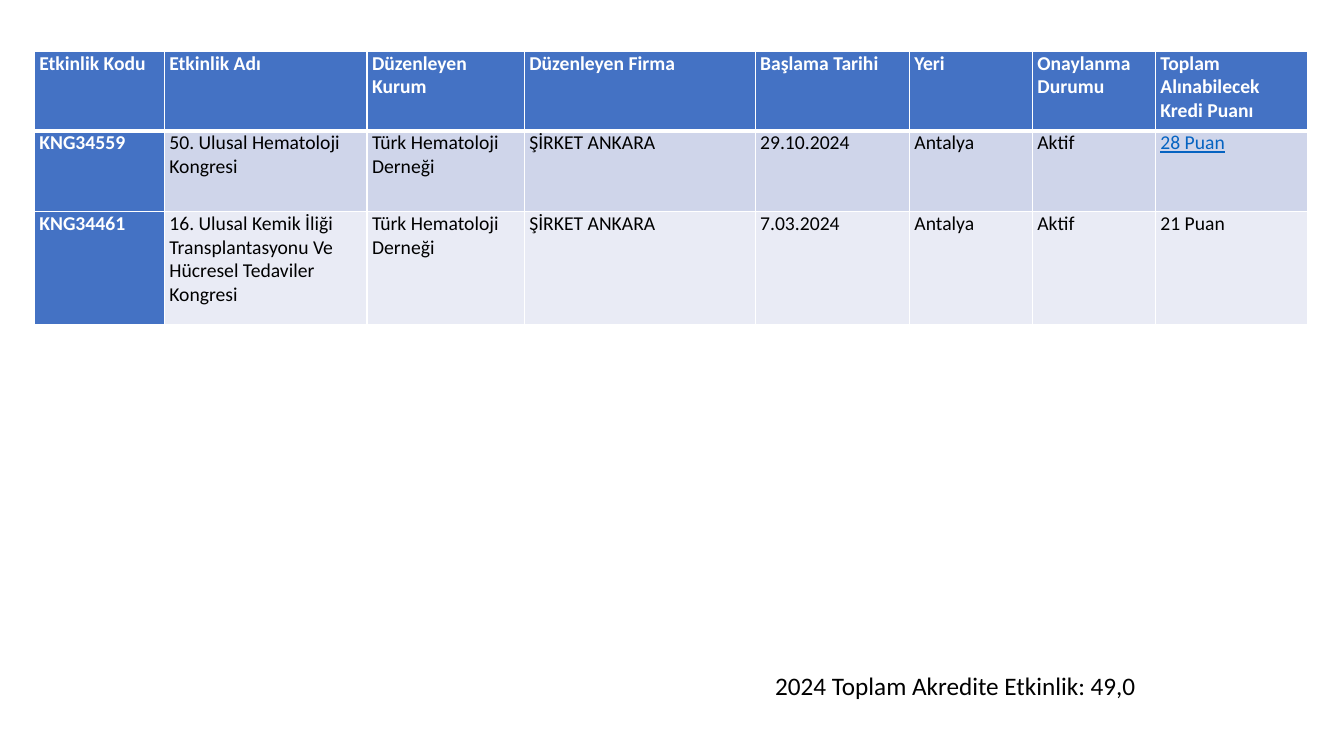
from lxml import etree
from pptx import Presentation
from pptx import util as u
from pptx.dml.color import RGBColor
from pptx.enum import text
from pptx.oxml import ns

PX = 9144  # 100 px to the inch
FONT = "Calibri"
WHITE, BLACK, BLUE, LINK = "FFFFFF", "000000", "4472C4", "0563C1"
BAND_FILLS = ["CFD5EA", "E9EBF5"]

COLUMN_WIDTHS = [129, 201, 156, 229, 153, 122, 122, 151]
ROW_HEIGHTS = [79, 80, 112]
EVENTS = [
    ["Etkinlik Kodu", "Etkinlik Adı", "Düzenleyen Kurum", "Düzenleyen Firma",
     "Başlama Tarihi", "Yeri", "Onaylanma Durumu", "Toplam Alınabilecek Kredi Puanı"],
    ["KNG34559", "50. Ulusal Hematoloji Kongresi", "Türk Hematoloji Derneği",
     "ŞİRKET ANKARA", "29.10.2024", "Antalya", "Aktif", "28 Puan"],
    ["KNG34461", "16. Ulusal Kemik İliği Transplantasyonu Ve Hücresel Tedaviler Kongresi",
     "Türk Hematoloji Derneği", "ŞİRKET ANKARA", "7.03.2024", "Antalya", "Aktif", "21 Puan"],
]
UNDERLINED_CELL = (1, 7)


def px(length):
    return u.Emu(length * PX)


def color(hex_string):
    return RGBColor.from_string(hex_string)


def style_font(paragraph, size, hex_string, bold=False):
    font = paragraph.font
    font.name, font.size, font.bold = FONT, u.Pt(size), bold
    font.color.rgb = color(hex_string)


def add_borders(cell, widths):
    """Draw white cell borders; widths maps L, R, T, B to points, in that order."""
    properties = cell._tc.get_or_add_tcPr()
    for side, width in widths.items():
        line = etree.SubElement(properties, ns.qn(f"a:ln{side}"), w=str(u.Pt(width)))
        fill = etree.SubElement(line, ns.qn("a:solidFill"))
        etree.SubElement(fill, ns.qn("a:srgbClr"), val=WHITE)


def fill_cell(cell, row, column, wording):
    is_heading = row == 0 or column == 0
    cell.margin_left = cell.margin_right = px(5)
    cell.margin_top = cell.margin_bottom = 0
    add_borders(cell, {"L": 1, "R": 1, "T": 3 if row == 1 else 1, "B": 3 if row == 0 else 1})
    cell.fill.solid()
    cell.fill.fore_color.rgb = color(BLUE if is_heading else BAND_FILLS[row - 1])
    cell.text = wording
    paragraph = cell.text_frame.paragraphs[0]
    underlined = (row, column) == UNDERLINED_CELL
    style_font(paragraph, 14, WHITE if is_heading else LINK if underlined else BLACK, is_heading)
    if underlined:
        paragraph.font.underline = True


def add_event_table(slide, left, top):
    table = slide.shapes.add_table(
        len(ROW_HEIGHTS), len(COLUMN_WIDTHS), px(left), px(top),
        px(sum(COLUMN_WIDTHS)), px(sum(ROW_HEIGHTS))).table
    table.first_col = True
    for column, width in zip(table.columns, COLUMN_WIDTHS):
        column.width = px(width)
    for row, height in zip(table.rows, ROW_HEIGHTS):
        row.height = px(height)
    for row, wordings in enumerate(EVENTS):
        for column, wording in enumerate(wordings):
            fill_cell(table.cell(row, column), row, column, wording)


def add_total(slide, left, top, width, height):
    frame = slide.shapes.add_textbox(px(left), px(top), px(width), px(height)).text_frame
    frame.word_wrap = True
    frame.auto_size = text.MSO_AUTO_SIZE.SHAPE_TO_FIT_TEXT
    frame.text = "2024 Toplam Akredite Etkinlik: 49,0"
    style_font(frame.paragraphs[0], 18, BLACK)


def main():
    presentation = Presentation()
    presentation.slide_width, presentation.slide_height = px(1333), px(750)
    slide = presentation.slides.add_slide(presentation.slide_layouts[6])
    add_event_table(slide, 34, 51)
    add_total(slide, 759, 660, 382, 40)
    presentation.save("out.pptx")


if __name__ == "__main__":
    main()
